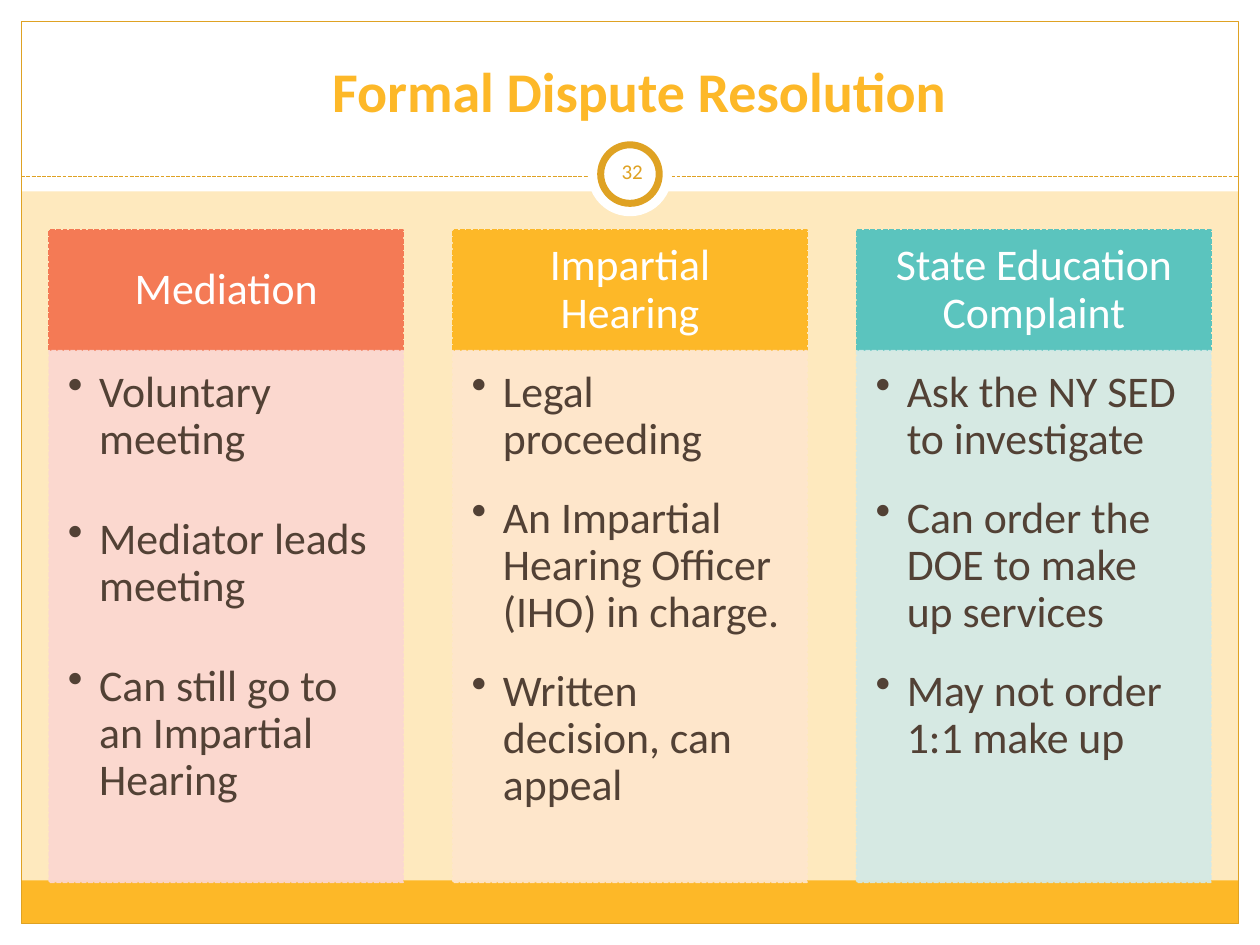
from lxml.etree import SubElement
from pptx import Presentation
from pptx.dml.color import RGBColor
from pptx.enum.dml import MSO_LINE
from pptx.enum.shapes import MSO_CONNECTOR, MSO_SHAPE
from pptx.enum.text import MSO_ANCHOR, PP_ALIGN
from pptx.oxml.ns import qn
from pptx.util import Cm, Pt

WIDE, HIGH = 25.4, 19.05
EDGE = 0.43
WHITE, GOLD, OCHRE, BROWN = "FFFFFF", "FDB828", "DFA223", "524135"
COLUMNS = [
    ("Mediation", "F47A55", "FBD7D1", 12,
     ["Voluntary meeting", "Mediator leads meeting",
      "Can still go to an Impartial Hearing"]),
    ("Impartial Hearing", GOLD, "FEE6CD", 0,
     ["Legal proceeding", "An Impartial Hearing Officer (IHO) in charge.",
      "Written decision, can appeal"]),
    ("State Education Complaint", "5BC4BE", "D2EAE8", 0,
     ["Ask the NY SED to investigate", "Can order the DOE to make up services",
      "May not order 1:1 make up"]),
]


def color(code):
    return RGBColor.from_string(code)


def fade(fill, percent):
    """Set the opacity of a solid fill."""
    tint = fill._xPr.find(qn("a:solidFill"))[0]
    SubElement(tint, qn("a:alpha"), val=str(percent * 1000))


def add_box(slide, box, fill=None, line=None, width=0.75, dash=None,
            kind=MSO_SHAPE.RECTANGLE):
    shape = slide.shapes.add_shape(kind, *map(Cm, box))
    shape.shadow.inherit = False
    if fill:
        shape.fill.solid()
        shape.fill.fore_color.rgb = color(fill)
    else:
        shape.fill.background()
    if line:
        shape.line.color.rgb = color(line)
        shape.line.width = Pt(width)
        shape.line.dash_style = dash
    else:
        shape.line.fill.background()
    return shape


def write(shape, texts, size, ink, inset, anchor=MSO_ANCHOR.MIDDLE,
          align=PP_ALIGN.CENTER, bold=False):
    """Fill a shape with one paragraph per text; inset is left, top, right, bottom."""
    frame = shape.text_frame
    frame.word_wrap = True
    frame.vertical_anchor = anchor
    (frame.margin_left, frame.margin_top,
     frame.margin_right, frame.margin_bottom) = map(Cm, inset)
    for i, text in enumerate(texts):
        para = frame.add_paragraph() if i else frame.paragraphs[0]
        para.text = text
        para.alignment = align
        font = para.font
        font.name, font.size, font.bold = "Calibri", Pt(size), bold
        font.color.rgb = color(ink)
    return frame.paragraphs


def add_bullet(para):
    props = para._p.get_or_add_pPr()
    props.set("marL", str(Cm(0.63)))
    props.set("indent", str(Cm(-0.63)))
    SubElement(props, qn("a:buChar"), char="•")


def draw_frame(slide, left, top, width, height):
    right, bottom = left + width, top + height
    add_box(slide, (left, bottom - EDGE, width, EDGE), WHITE)
    add_box(slide, (left, top, width, 3.86), WHITE)
    for x in (left, right - EDGE):
        add_box(slide, (x, top, EDGE, height), WHITE)
    inner = width - 2 * EDGE
    add_box(slide, (left + EDGE, bottom - 1.3, inner, 0.87), GOLD)
    add_box(slide, (left + EDGE, top + EDGE, inner, height - 2 * EDGE),
            line=OCHRE)
    y = Cm(top + 3.56)
    rule = slide.shapes.add_connector(
        MSO_CONNECTOR.STRAIGHT, Cm(left + EDGE), y, Cm(right - EDGE), y)
    rule.line.color.rgb = color(OCHRE)
    rule.line.width = Pt(0.75)
    rule.line.dash_style = MSO_LINE.SQUARE_DOT
    SubElement(rule._element.spPr, qn("a:effectLst"))


def draw_title(slide, left, top, width, height):
    box = slide.shapes.add_textbox(*map(Cm, (left, top, width, height)))
    write(box, ["Formal Dispute Resolution"], 32, GOLD,
          (0.25, 0.13, 0.25, 0.13), MSO_ANCHOR.BOTTOM, bold=True)


def draw_badge(slide, left, top, size):
    rim = 0.26
    core = size - 2 * rim
    add_box(slide, (left, top, size, size), WHITE, kind=MSO_SHAPE.OVAL)
    add_box(slide, (left + rim, top + rim, core, core), WHITE, OCHRE, 4,
            kind=MSO_SHAPE.OVAL)
    label = slide.shapes.add_textbox(
        *map(Cm, (left + rim, top + 0.18, 1.27, 1.22)))
    write(label, ["32"], 12, OCHRE, [0.13] * 4)


def draw_column(slide, left, top, width, height, item):
    name, dark, pale, before, points = item
    head = 2.43
    cap = add_box(slide, (left, top, width, head), dark, dark, 0.9,
                  MSO_LINE.SQUARE_DOT)
    for para in write(cap, [name], 25, WHITE, (0.48, 0.28, 0.48, 0.28)):
        para.line_spacing = 0.9

    body = add_box(slide, (left, top + head, width, height - head), pale, pale,
                   0.9, MSO_LINE.SQUARE_DOT)
    fade(body.fill, 90)
    fade(body.line.fill, 90)
    for para in write(body, points, 25, BROWN, (0.38, 0.38, 0.48, 0.56),
                      MSO_ANCHOR.TOP, PP_ALIGN.LEFT):
        para.line_spacing = 0.9
        para.space_before, para.space_after = Pt(before), Pt(18)
        add_bullet(para)


def draw_columns(slide, left, top, width, height):
    wide = 7.14
    step = (width - wide) / (len(COLUMNS) - 1)
    for i, item in enumerate(COLUMNS):
        draw_column(slide, left + i * step, top, wide, height, item)


def main():
    deck = Presentation()
    deck.slide_width, deck.slide_height = Cm(WIDE), Cm(HIGH)
    slide = deck.slides.add_slide(deck.slide_layouts[6])
    back = slide.background.fill
    back.solid()
    back.fore_color.rgb = color("FEE9BE")
    draw_frame(slide, 0, 0, WIDE, HIGH)
    draw_title(slide, 1.04, 0.51, 23.7, 2.11)
    draw_columns(slide, 0.99, 4.64, 23.42, 13.15)
    draw_badge(slide, 11.85, 2.66, 1.7)
    deck.save("out.pptx")


if __name__ == "__main__":
    main()
